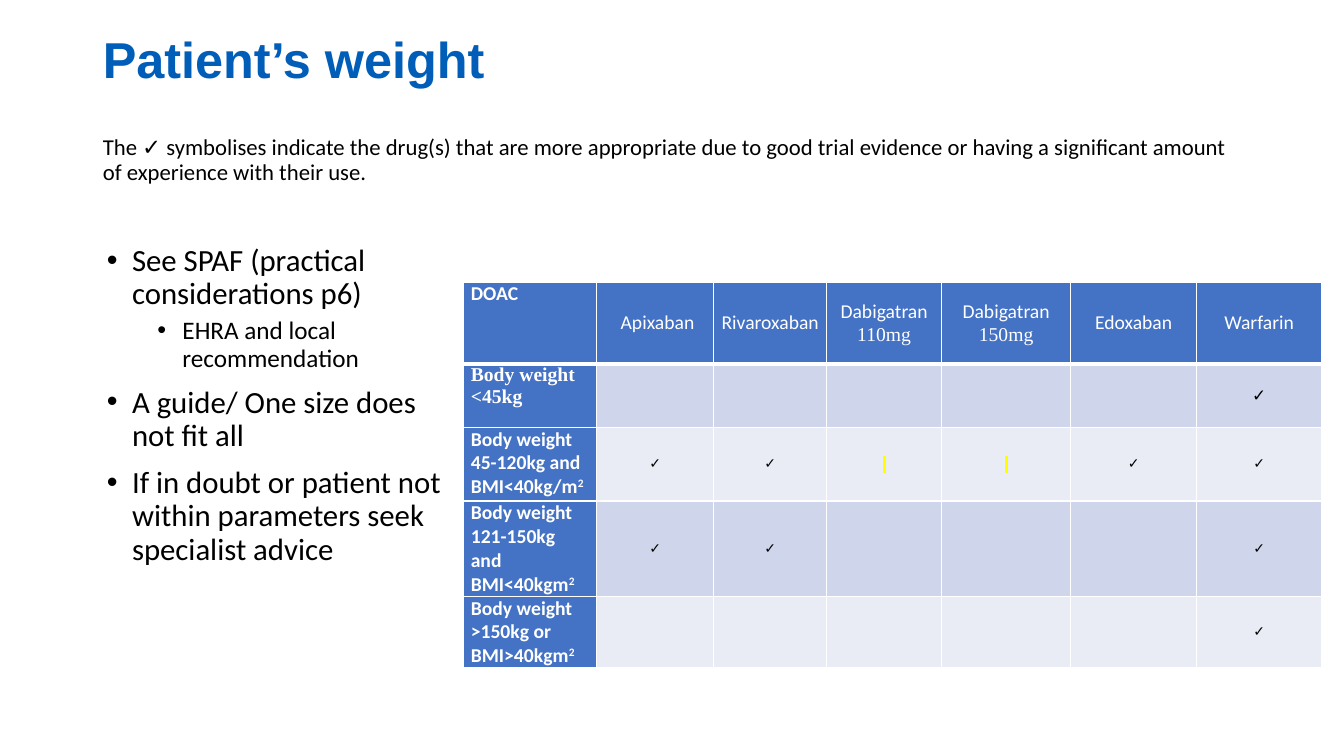
from dataclasses import dataclass

from lxml.etree import SubElement
from pptx import Presentation
from pptx.dml.color import RGBColor
from pptx.enum.text import MSO_ANCHOR as Anchor
from pptx.enum.text import MSO_AUTO_SIZE as AutoSize
from pptx.enum.text import PP_ALIGN as Align
from pptx.oxml.ns import qn
from pptx.util import Inches, Pt


@dataclass(frozen=True)
class Theme:
    title_color: str = "005EB8"
    text: str = "000000"
    white: str = "FFFFFF"
    header: str = "4472C4"
    bands: tuple = ("CFD5EA", "E9EBF5")
    highlight: str = "FFFF00"
    body_font: str = "Calibri"
    title_font: str = "Arial"
    serif_font: str = "Times New Roman"
    title_size: float = 36
    note_size: float = 16.2
    bullet_sizes: tuple = (22, 18)
    table_size: float = 14
    tick_size: float = 10
    large_tick_size: float = 12


THEME = Theme()
TITLE = "Patient’s weight"
NOTE = (
    "The ✓ symbolises indicate the drug(s) that are more appropriate due to good "
    "trial evidence or having a significant amount of experience with their use."
)
BULLETS = [
    (0, "See SPAF (practical considerations p6)"),
    (1, "EHRA and local recommendation"),
    (0, "A guide/ One size does not fit all"),
    (0, "If in doubt or patient not within parameters seek specialist advice"),
]
TICK = "✓"
MARK = " "  # a highlighted no-break space
DRUGS = [" Apixaban", "Rivaroxaban", "Dabigatran\n110mg", "Dabigatran\n150mg",
         "Edoxaban", "Warfarin"]
# Label, superscript, then one entry for each drug
WEIGHT_ROWS = [
    ("Body weight <45kg", "", ["", "", "", "", "", TICK]),
    ("Body weight 45-120kg and BMI<40kg/m", "2", [TICK, TICK, MARK, MARK, TICK, TICK]),
    ("Body weight 121-150kg and BMI<40kgm", "2", [TICK, TICK, "", "", "", TICK]),
    ("Body weight >150kg or BMI>40kgm", "2", ["", "", "", "", "", TICK]),
]
COLUMN_WIDTHS = [1.32, 1.16, 1.12, 1.14, 1.28, 1.25, 1.24]
ROW_HEIGHTS = [0.81, 0.63, 0.73, 0.7, 0.65]


def style_run(run, size, color, font=THEME.body_font, bold=False):
    run.font.size = Pt(size)
    run.font.name = font
    run.font.bold = bold
    run.font.color.rgb = RGBColor.from_string(color)


def place(shape, box):
    shape.left, shape.top, shape.width, shape.height = map(Inches, box)
    shape.text_frame.word_wrap = True
    shape.text_frame.auto_size = AutoSize.NONE


def add_heading(slide, box):
    shape = slide.shapes.title
    place(shape, box)
    frame = shape.text_frame
    frame.vertical_anchor = Anchor.TOP
    frame.margin_top = frame.margin_bottom = 0
    frame.text = f"{TITLE}\n{NOTE}"
    title, note = frame.paragraphs
    for paragraph in (title, note):
        paragraph.alignment = Align.LEFT
        paragraph.line_spacing = 0.9
        paragraph.space_before = Pt(0)
    note.space_before = Pt(33)
    style_run(title.runs[0], THEME.title_size, THEME.title_color, THEME.title_font, True)
    style_run(note.runs[0], THEME.note_size, THEME.text)


def set_bullet(paragraph, left):
    properties = paragraph._p.get_or_add_pPr()
    properties.set("marL", str(Inches(left)))
    properties.set("indent", str(Inches(-0.25)))
    SubElement(properties, qn("a:buFont"), typeface="Arial")
    SubElement(properties, qn("a:buChar"), char="•")


def add_bullets(slide, box):
    shape = slide.placeholders[1]
    place(shape, box)
    frame = shape.text_frame
    frame.vertical_anchor = Anchor.MIDDLE
    frame.margin_bottom = Inches(0.46)
    frame.text = "\n".join(text for _, text in BULLETS)
    for paragraph, (level, _) in zip(frame.paragraphs, BULLETS):
        paragraph.level = level
        paragraph.line_spacing = 0.9
        paragraph.space_before = Pt(5 if level else 10)
        set_bullet(paragraph, 0.25 + 0.5 * level)
        style_run(paragraph.runs[0], THEME.bullet_sizes[level], THEME.text)


def set_borders(cell, bottom):
    properties = cell._tc.get_or_add_tcPr()
    widths = {"a:lnL": 1, "a:lnR": 1, "a:lnT": 1, "a:lnB": bottom}
    for position, (tag, width) in enumerate(widths.items()):
        line = SubElement(properties, qn(tag), w=str(Pt(width)))
        fill = SubElement(line, qn("a:solidFill"))
        SubElement(fill, qn("a:srgbClr"), val=THEME.white)
        properties.insert(position, line)


def fill_cell(cell, text, color, bottom=1, centred=True):
    cell.fill.solid()
    cell.fill.fore_color.rgb = RGBColor.from_string(color)
    set_borders(cell, bottom)
    cell.margin_left = cell.margin_right = Inches(0.07)
    cell.margin_top = cell.margin_bottom = 0
    cell.vertical_anchor = Anchor.MIDDLE if centred else Anchor.TOP
    cell.text_frame.text = text
    for paragraph in cell.text_frame.paragraphs:
        paragraph.alignment = Align.CENTER if centred else Align.LEFT


def highlight_run(run):
    highlight = SubElement(run._r.rPr, qn("a:highlight"))
    SubElement(highlight, qn("a:srgbClr"), val=THEME.highlight)
    run._r.rPr.find(qn("a:solidFill")).addnext(highlight)


def fill_header(table):
    for column, text in enumerate(["DOAC", *DRUGS]):
        cell = table.cell(0, column)
        fill_cell(cell, text, THEME.header, bottom=3, centred=column > 0)
        for line, paragraph in enumerate(cell.text_frame.paragraphs):
            font = THEME.serif_font if line else THEME.body_font
            style_run(paragraph.runs[0], THEME.table_size, THEME.white, font, column == 0)


def fill_weight_row(table, row, label, superscript, entries):
    label_cell = table.cell(row, 0)
    fill_cell(label_cell, label, THEME.header, centred=False)
    paragraph = label_cell.text_frame.paragraphs[0]
    if superscript:
        raised = paragraph.add_run()
        raised.text = superscript
        raised.font._element.set("baseline", "30000")
    font = THEME.body_font if superscript else THEME.serif_font
    for run in paragraph.runs:
        style_run(run, THEME.table_size, THEME.white, font, True)

    tick_size = THEME.large_tick_size if row == 1 else THEME.tick_size
    for column, entry in enumerate(entries, start=1):
        cell = table.cell(row, column)
        fill_cell(cell, entry, THEME.bands[(row - 1) % 2])
        for run in cell.text_frame.paragraphs[0].runs:
            style_run(run, tick_size, THEME.text)
            if entry == MARK:
                highlight_run(run)


def add_weight_table(slide, left, top):
    table = slide.shapes.add_table(
        len(ROW_HEIGHTS), len(COLUMN_WIDTHS), Inches(left), Inches(top),
        Inches(sum(COLUMN_WIDTHS)), Inches(sum(ROW_HEIGHTS)),
    ).table
    for column, width in zip(table.columns, COLUMN_WIDTHS):
        column.width = Inches(width)
    for row, height in zip(table.rows, ROW_HEIGHTS):
        row.height = Inches(height)
    fill_header(table)
    for row, (label, superscript, entries) in enumerate(WEIGHT_ROWS, start=1):
        fill_weight_row(table, row, label, superscript, entries)


def main():
    presentation = Presentation()
    presentation.slide_width = Inches(13.33)
    presentation.slide_height = Inches(7.5)
    slide = presentation.slides.add_slide(presentation.slide_layouts[1])
    add_heading(slide, (0.92, 0.35, 11.5, 1.5))
    add_bullets(slide, (0.96, 1.85, 3.64, 4.76))
    add_weight_table(slide, 4.6, 2.8)
    presentation.save("out.pptx")


if __name__ == "__main__":
    main()
